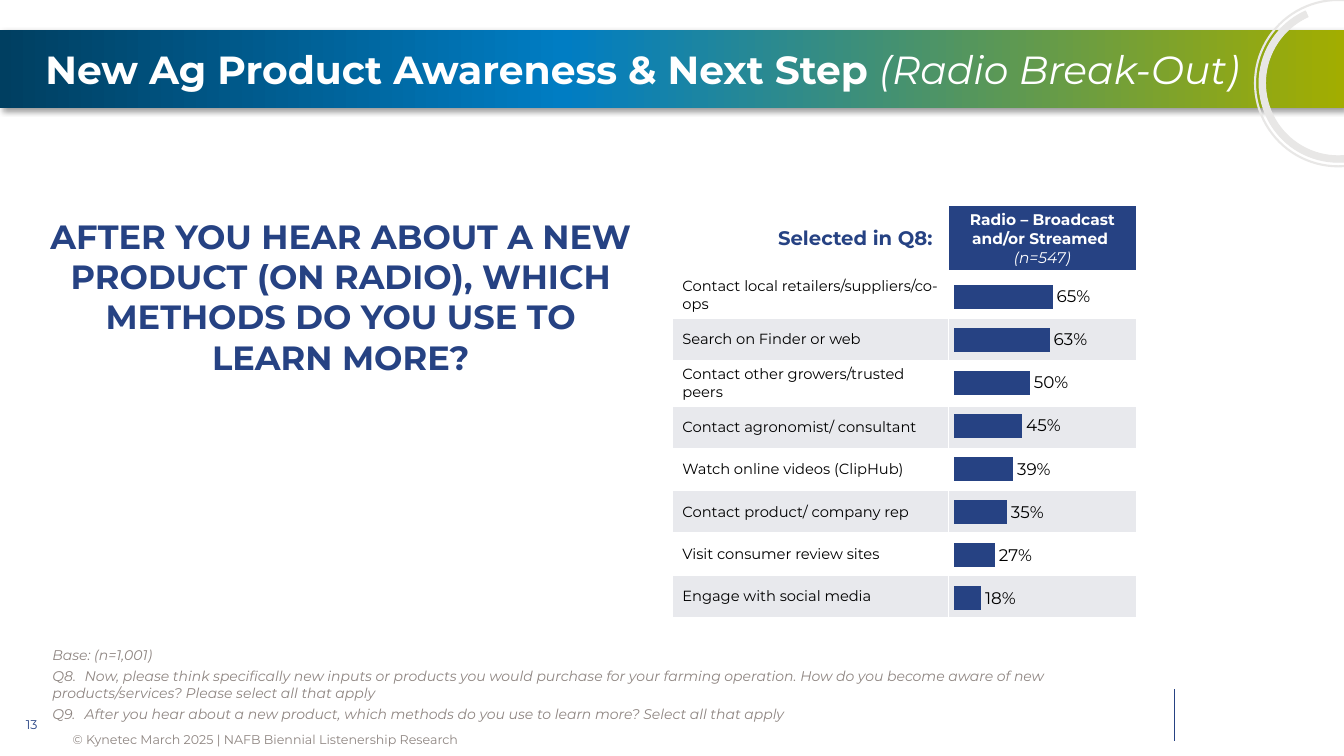
from dataclasses import dataclass

from lxml.etree import SubElement as Sub
from pptx import Presentation
from pptx.chart.data import CategoryChartData as Data
from pptx.dml.color import RGBColor as Rgb
from pptx.enum.chart import XL_CHART_TYPE as Kind, XL_LABEL_POSITION as Spot
from pptx.enum.shapes import MSO_CONNECTOR as Link, MSO_SHAPE as Form
from pptx.enum.text import MSO_ANCHOR as Anchor, MSO_AUTO_SIZE as Fit, PP_ALIGN as Align
from pptx.oxml import parse_xml
from pptx.oxml.ns import nsdecls, qn
from pptx.util import Inches, Pt

HUES = {
    "navy": "264283", "lime": "A2AD00", "gray": "8E8581", "ring": "E8E7E6",
    "band": "E8E9ED", "white": "FFFFFF", "black": "000000",
    "deep": "003F61", "blue": "007DC3",
}
FACE = "Montserrat"
WIDE, HIGH = Inches(13.33), Inches(7.5)


@dataclass
class Box:
    """Position and size in percent of the slide."""
    x: float
    y: float
    w: float
    h: float

    def emu(self) -> tuple[int, int, int, int]:
        return across(self.x), down(self.y), across(self.w), down(self.h)


@dataclass
class Style:
    size: float
    hue: str
    bold: bool = False
    slant: bool = False
    align: Align = Align.LEFT
    space: float = 0


@dataclass
class Ring:
    form: Form
    box: Box
    width: float
    fill: str = ""
    turn: float = 0
    adjust: tuple[float, ...] = ()


@dataclass
class Method:
    label: str
    share: float


METHODS = [
    Method("Contact local retailers/suppliers/co-ops", 0.65),
    Method("Search on Finder or web", 0.63),
    Method("Contact other growers/trusted peers", 0.5),
    Method("Contact agronomist/ consultant", 0.45),
    Method("Watch online videos (ClipHub)", 0.39),
    Method("Contact product/ company rep", 0.35),
    Method("Visit consumer review sites", 0.27),
    Method("Engage with social media", 0.18),
]
NOTES = [
    "Base: (n=1,001)",
    "Q8.\tNow, please think specifically new inputs or products you would purchase for your "
    "farming operation. How do you become aware of new products/services? Please select all that apply",
    "Q9.\tAfter you hear about a new product, which methods do you use to learn more? "
    "Select all that apply",
]
RINGS = [
    Ring(Form.OVAL, Box(93.38, 0, 12.38, 22), 1.5),
    Ring(Form.BLOCK_ARC, Box(93.68, 0.53, 11.78, 20.93), 0.75, "ring", 90, (263.9, 155.49, 0.04)),
]


def across(part: float) -> int:
    return round(WIDE * part / 100)


def down(part: float) -> int:
    return round(HIGH * part / 100)


def tint(name: str) -> Rgb:
    return Rgb.from_string(HUES[name])


def ink(font, style: Style) -> None:
    font.name, font.size = FACE, Pt(style.size)
    font.bold, font.italic = style.bold, style.slant
    font.color.rgb = tint(style.hue)


def dress(para, style: Style, first: bool = True) -> None:
    para.alignment = style.align
    para.space_before = Pt(0 if first else style.space)
    for run in para.runs:
        ink(run.font, style)


def write(frame, lines: list[str], style: Style) -> None:
    frame.text = "\n".join(lines)
    for i, para in enumerate(frame.paragraphs):
        dress(para, style, i == 0)


def place(shape, box: Box) -> None:
    shape.left, shape.top, shape.width, shape.height = box.emu()


def trim(frame, anchor: Anchor = Anchor.MIDDLE, inset: float = 0) -> None:
    frame.word_wrap, frame.auto_size = True, Fit.NONE
    frame.vertical_anchor = anchor
    frame.margin_left = frame.margin_right = Inches(inset)
    frame.margin_top = frame.margin_bottom = Inches(inset / 2)


def label(slide, box: Box, text: str, style: Style) -> None:
    frame = slide.shapes.add_textbox(*box.emu()).text_frame
    trim(frame)
    write(frame, [text], style)


def draw(slide, ring: Ring) -> None:
    shape = slide.shapes.add_shape(ring.form, *ring.box.emu())
    shape.shadow.inherit = False
    shape.rotation = ring.turn
    if ring.adjust:
        start, end, thick = ring.adjust
        for i, value in enumerate((start * 0.6, end * 0.6, thick)):
            shape.adjustments[i] = value
    if ring.fill:
        shape.fill.solid()
        shape.fill.fore_color.rgb = tint(ring.fill)
    else:
        shape.fill.background()
    shape.line.color.rgb, shape.line.width = tint("ring"), Pt(ring.width)


def banner(slide) -> None:
    band = slide.shapes.add_shape(Form.RECTANGLE, *Box(0, 4, 100, 10.27).emu())
    band.line.fill.background()
    stops = "".join(f'<a:gs pos="{at * 1000}"><a:srgbClr val="{HUES[hue]}"/></a:gs>'
                    for at, hue in ((0, "deep"), (42, "blue"), (100, "lime")))
    props = band.element.spPr
    props.find(qn("a:prstGeom")).addnext(parse_xml(
        f'<a:gradFill {nsdecls("a")}><a:gsLst>{stops}</a:gsLst><a:lin ang="0" scaled="0"/></a:gradFill>'))
    props.append(parse_xml(
        f'<a:effectLst {nsdecls("a")}><a:outerShdw blurRad="{Pt(4)}" dist="{Pt(3)}" dir="2700000">'
        f'<a:srgbClr val="{HUES["black"]}"><a:alpha val="40000"/></a:srgbClr></a:outerShdw></a:effectLst>'))
    title = slide.shapes.title
    band.element.addnext(title.element)
    place(title, Box(3.38, 3.83, 90.3, 10.53))
    trim(title.text_frame)
    write(title.text_frame, ["New Ag Product Awareness & Next Step "], Style(28, "white", True))
    run = title.text_frame.paragraphs[0].add_run()
    run.text = "(Radio Break-Out)"
    ink(run.font, Style(28, "white", slant=True))


def question(slide) -> None:
    body = slide.placeholders[1]
    place(body, Box(2.4, 34.8, 45.9, 8.8))
    frame = body.text_frame
    trim(frame, inset=0.1)
    frame.text = "AFTER YOU HEAR ABOUT A NEW PRODUCT (ON RADIO), WHICH METHODS DO YOU USE TO LEARN MORE?"
    props = frame.paragraphs[0]._p.get_or_add_pPr()
    props.set("marL", "0")
    props.set("indent", "0")
    Sub(props, qn("a:buNone"))
    dress(frame.paragraphs[0], Style(24, "navy", True, align=Align.CENTER))


def notes(slide) -> None:
    frame = slide.shapes.add_textbox(*Box(3.9, 85.47, 77.25, 12.93).emu()).text_frame
    trim(frame, Anchor.TOP)
    frame.text = "\n".join(NOTES)
    for i, para in enumerate(frame.paragraphs):
        tabs = Sub(para._p.get_or_add_pPr(), qn("a:tabLst"))
        for stop in (0.32, 0.44):
            Sub(tabs, qn("a:tab"), pos=str(Inches(stop)), algn="l")
        dress(para, Style(10, "gray", slant=True, space=3), i == 0)


def paint(cell, fill: str, foot: float = 1) -> None:
    cell.vertical_anchor = Anchor.MIDDLE
    props = cell._tc.get_or_add_tcPr()
    for side, width in (("L", 1), ("R", 1), ("T", 1), ("B", foot)):
        edge = Sub(props, qn(f"a:ln{side}"), w=str(Pt(width)))
        Sub(Sub(edge, qn("a:solidFill")), qn("a:srgbClr"), val=HUES["white"])
    cell.fill.solid()
    cell.fill.fore_color.rgb = tint(fill)


def table(slide) -> None:
    rows = [8.53] + [5.87 if len(m.label) > 32 else 5.6 for m in METHODS]
    cols = [20.53, 14]
    box = Box(50.03, 27.2, sum(cols), sum(rows))
    grid = slide.shapes.add_table(len(rows), len(cols), *box.emu()).table
    grid.horz_banding = False
    for col, part in zip(grid.columns, cols):
        col.width = across(part)
    for row, part in zip(grid.rows, rows):
        row.height = down(part)
    left, right = grid.cell(0, 0), grid.cell(0, 1)
    paint(left, "white", 3)
    paint(right, "navy", 3)
    write(left.text_frame, ["Selected in Q8: "], Style(14, "navy", True, align=Align.RIGHT))
    write(right.text_frame, ["Radio – Broadcast and/or Streamed ", "(n=547)"],
          Style(11, "white", True, align=Align.CENTER))
    dress(right.text_frame.paragraphs[1], Style(11, "white", slant=True, align=Align.CENTER))
    for i, method in enumerate(METHODS, 1):
        for j in range(2):
            paint(grid.cell(i, j), "white" if i % 2 else "band")
        write(grid.cell(i, 0).text_frame, [method.label], Style(10.5, "black"))


def bars(slide) -> None:
    data = Data(number_format="0%")
    data.categories = [str(i) for i in range(1, len(METHODS) + 1)]
    data.add_series("Series 1", [m.share for m in METHODS])
    chart = slide.shapes.add_chart(Kind.BAR_CLUSTERED, *Box(70.83, 36, 12.6, 46).emu(), data).chart
    chart.has_legend = chart.has_title = False
    ink(chart.font, Style(18, "black"))
    cats, vals = chart.category_axis, chart.value_axis
    cats.reverse_order = True
    cats.visible = vals.visible = vals.has_major_gridlines = False
    vals.minimum_scale, vals.maximum_scale, vals.major_unit = 0, 1, 0.1
    plot = chart.plots[0]
    plot.gap_width, plot.vary_by_categories = 80, False
    fill = plot.series[0].format.fill
    fill.solid()
    fill.fore_color.rgb = tint("navy")
    plot.has_data_labels = True
    tags = plot.data_labels
    tags.show_value, tags.position = True, Spot.OUTSIDE_END
    tags.number_format, tags.number_format_is_linked = "0%", False
    ink(tags.font, Style(12, "black"))
    area = chart._chartSpace.chart.plotArea
    for old in area.findall(qn("c:layout")):
        area.remove(old)
    parts = [("layoutTarget", "inner"), ("xMode", "edge"), ("yMode", "edge"),
             ("x", 0.01), ("y", 0.01), ("w", 0.9), ("h", 0.99)]
    marks = "".join(f'<c:{key} val="{value}"/>' for key, value in parts)
    area.insert(0, parse_xml(
        f'<c:layout {nsdecls("c")}><c:manualLayout>{marks}</c:manualLayout></c:layout>'))


def main() -> None:
    deck = Presentation()
    deck.slide_width, deck.slide_height = WIDE, HIGH
    slide = deck.slides.add_slide(deck.slide_layouts[1])
    x = across(87.38)
    rule = slide.shapes.add_connector(Link.STRAIGHT, x, down(91.2), x, down(98))
    rule.line.color.rgb, rule.line.width = tint("navy"), Pt(0.75)
    Sub(rule.element.spPr, qn("a:effectLst"))
    label(slide, Box(5.4, 96.57, 69.08, 2.53),
          "© Kynetec March 2025 | NAFB Biennial Listenership Research", Style(9, "gray"))
    label(slide, Box(0.9, 93.2, 2.93, 5.2), "13", Style(9, "navy", align=Align.CENTER))
    notes(slide)
    banner(slide)
    for ring in RINGS:
        draw(slide, ring)
    question(slide)
    table(slide)
    bars(slide)
    deck.save("out.pptx")


if __name__ == "__main__":
    main()
